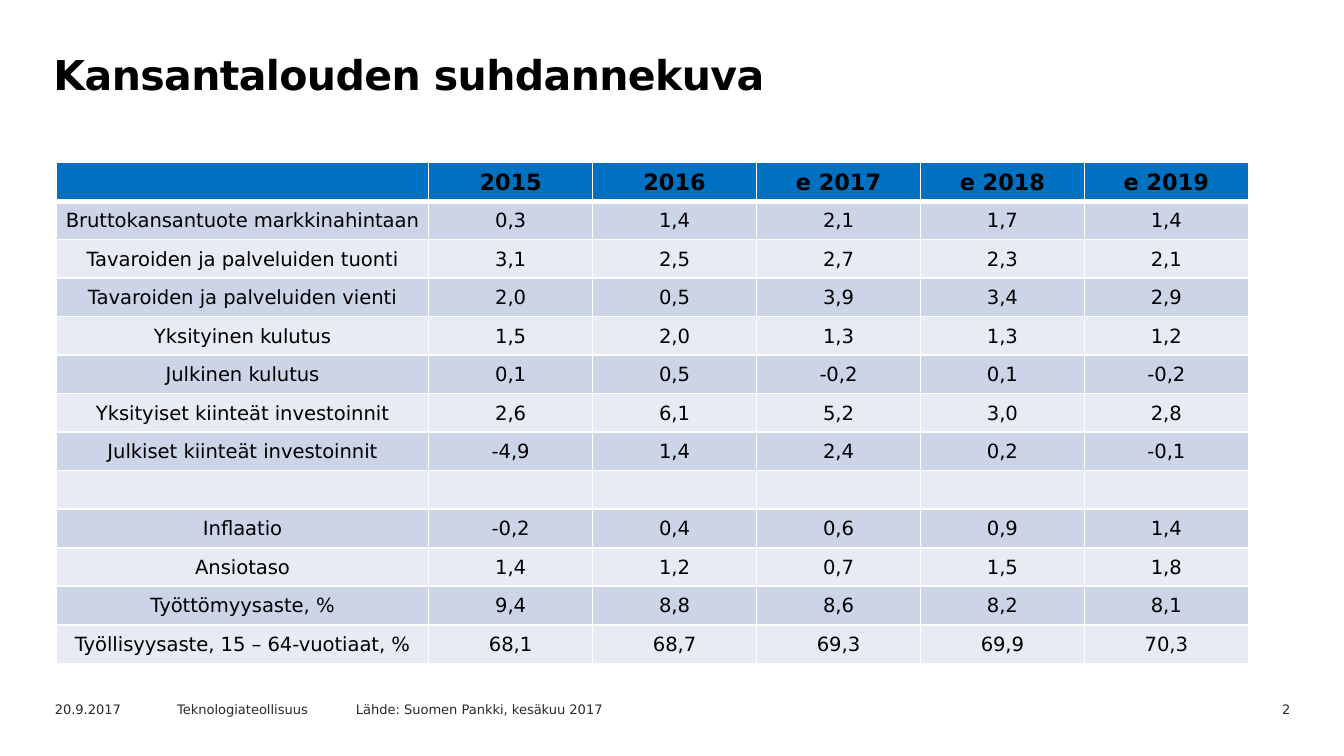
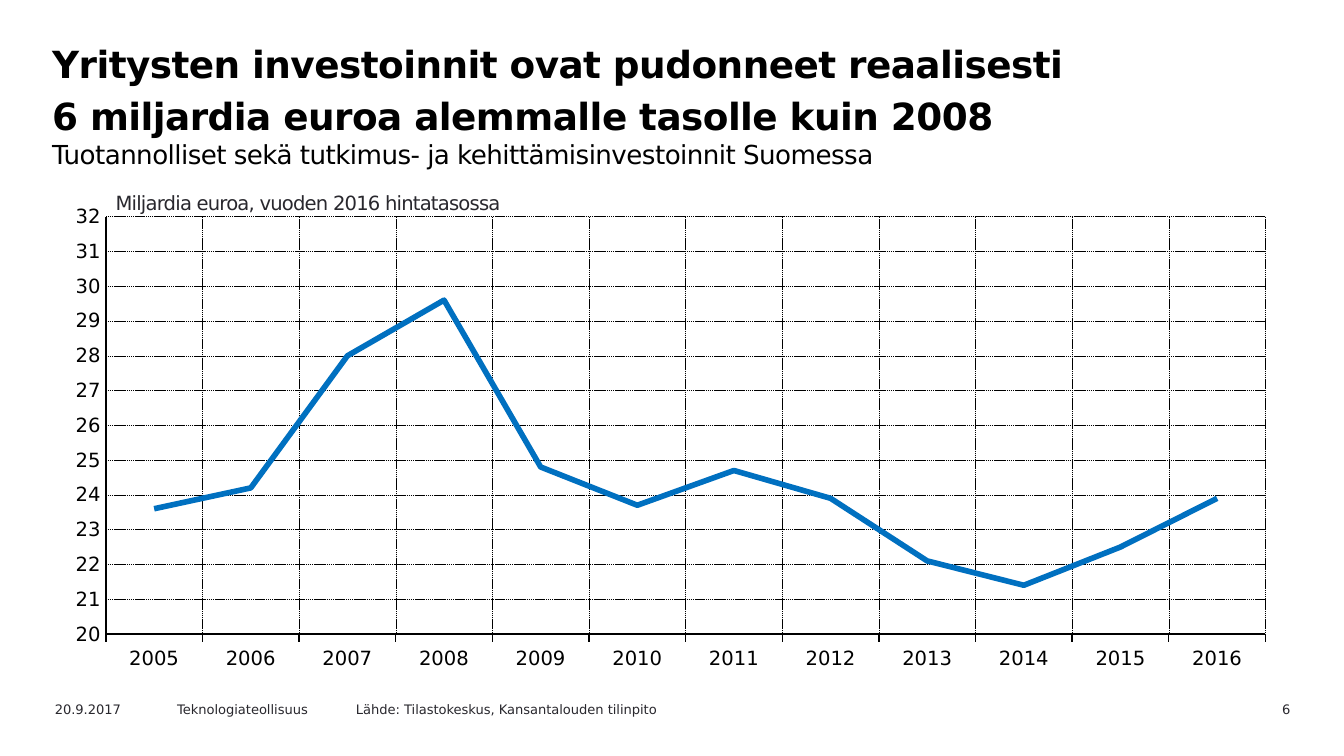
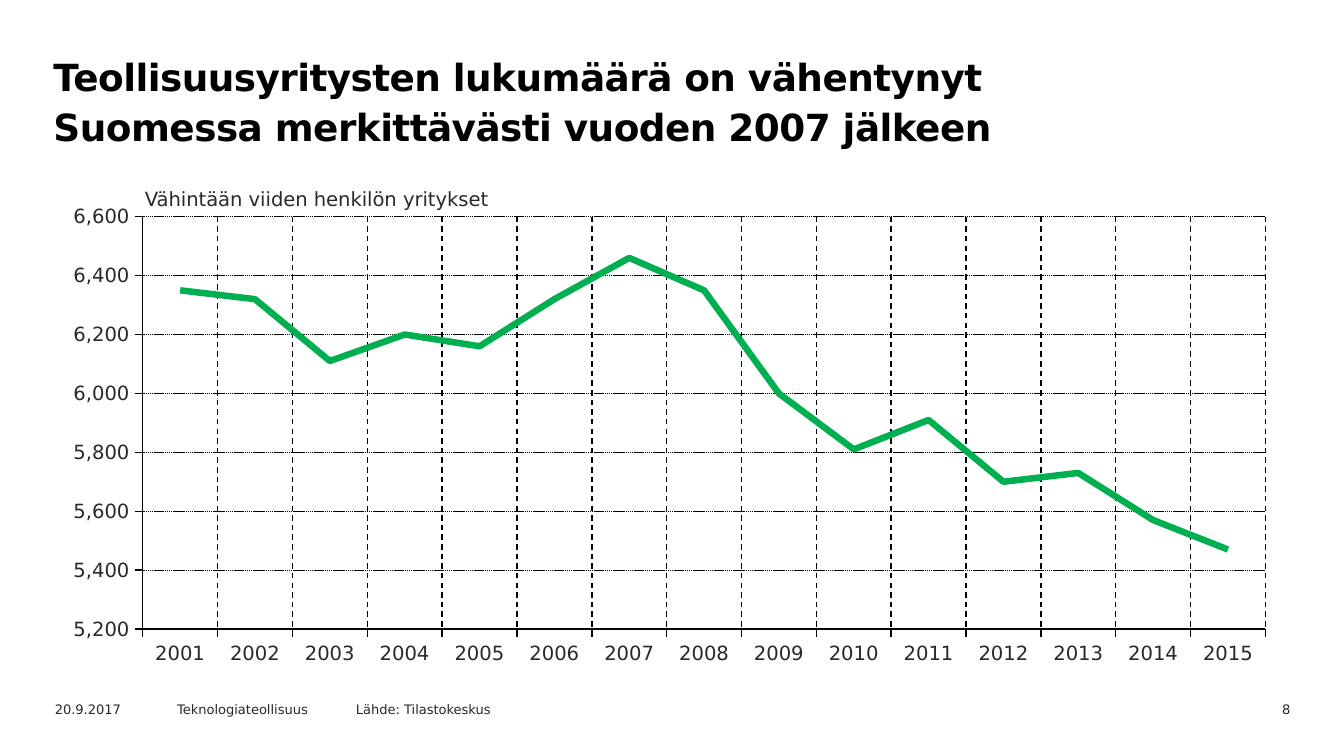
"""Build three slides on the Finnish economy: one table and two line charts."""
from lxml.etree import SubElement
from pptx import Presentation
from pptx.chart.data import CategoryChartData
from pptx.dml.color import RGBColor
from pptx.enum.chart import XL_CHART_TYPE, XL_TICK_MARK
from pptx.enum.dml import MSO_LINE
from pptx.enum.text import MSO_ANCHOR, PP_ALIGN
from pptx.oxml import parse_xml
from pptx.oxml.ns import nsdecls, qn
from pptx.util import Inches, Pt

FONT = "DejaVu Sans"
BLACK = RGBColor(0x00, 0x00, 0x00)
INK = RGBColor(0x29, 0x28, 0x2E)
WHITE = RGBColor(0xFF, 0xFF, 0xFF)
BLUE = RGBColor(0x00, 0x70, 0xC0)
GREEN = RGBColor(0x00, 0xB0, 0x50)
BANDS = (RGBColor(0xE7, 0xEB, 0xF4), RGBColor(0xCC, 0xD5, 0xE8))

prs = Presentation()
prs.slide_width = Inches(10)
prs.slide_height = Inches(5.625)
X = prs.slide_width / 100
Y = prs.slide_height / 100


def add_run(p, text, size, color=INK, bold=False, spacing=0):
    r = p.add_run()
    r.text = text
    r.font.name = FONT
    r.font.size = Pt(size)
    r.font.bold = bold
    r.font.color.rgb = color
    if spacing:
        r._r.get_or_add_rPr().set("spc", str(spacing))


def add_box(s, left, top, width, height):
    sp = s.shapes.add_textbox(int(left * X), int(top * Y), int(width * X), int(height * Y))
    sp.text_frame.word_wrap = True
    return sp.text_frame


PAGES = [
    {"number": "2", "source": "Lähde: Suomen Pankki, kesäkuu 2017", "left": 2.8, "top": 5.5,
     "title": ["Kansantalouden suhdannekuva"], "size": 22, "leading": Pt(27)},
    {"number": "6", "source": "Lähde: Tilastokeskus, Kansantalouden tilinpito", "left": 2.7, "top": 4.6,
     "title": ["Yritysten investoinnit ovat pudonneet reaalisesti",
               "6 miljardia euroa alemmalle tasolle kuin 2008"], "size": 20, "leading": None,
     "subtitle": "Tuotannolliset sekä tutkimus- ja kehittämisinvestoinnit Suomessa"},
    {"number": "8", "source": "Lähde: Tilastokeskus", "left": 2.8, "top": 5.5,
     "title": ["Teollisuusyritysten lukumäärä on vähentynyt Suomessa merkittävästi vuoden 2007 jälkeen"],
     "size": 20, "leading": Pt(27)},
]

slides = []
for page in PAGES:
    s = prs.slides.add_slide(prs.slide_layouts[6])
    slides.append(s)
    tf = add_box(s, page["left"], page["top"], 87, 12.6)
    for i, line in enumerate(page["title"]):
        p = tf.add_paragraph() if i else tf.paragraphs[0]
        p._p.get_or_add_pPr().set("marL", str(Inches(0.02)))
        p.line_spacing = page["leading"]
        p.space_before = Pt(4 if i else 0)
        add_run(p, line, page["size"], BLACK, True, -30)
    if "subtitle" in page:
        p.add_line_break()
        add_run(p, page["subtitle"], 14, BLACK, False, -30)
    for text, left, width, align in (
        ("20.9.2017", 3.1, 10, PP_ALIGN.LEFT),
        ("Teknologiateollisuus", 12.2, 14.2, PP_ALIGN.LEFT),
        (page["source"], 25.5, 41.8, PP_ALIGN.LEFT),
        (page["number"], 87.6, 9.4, PP_ALIGN.RIGHT),
    ):
        p = add_box(s, left, 91.9, width, 3.2).paragraphs[0]
        p.alignment = align
        add_run(p, text, 7)

YEARS = ["2015", "2016", "e 2017", "e 2018", "e 2019"]
ROWS = [
    ("", YEARS),
    ("Bruttokansantuote markkinahintaan", "0,3 1,4 2,1 1,7 1,4".split()),
    ("Tavaroiden ja palveluiden tuonti", "3,1 2,5 2,7 2,3 2,1".split()),
    ("Tavaroiden ja palveluiden vienti", "2,0 0,5 3,9 3,4 2,9".split()),
    ("Yksityinen kulutus", "1,5 2,0 1,3 1,3 1,2".split()),
    ("Julkinen kulutus", "0,1 0,5 -0,2 0,1 -0,2".split()),
    ("Yksityiset kiinteät investoinnit", "2,6 6,1 5,2 3,0 2,8".split()),
    ("Julkiset kiinteät investoinnit", "-4,9 1,4 2,4 0,2 -0,1".split()),
    ("", [""] * len(YEARS)),
    ("Inflaatio", "-0,2 0,4 0,6 0,9 1,4".split()),
    ("Ansiotaso", "1,4 1,2 0,7 1,5 1,8".split()),
    ("Työttömyysaste, %", "9,4 8,8 8,6 8,2 8,1".split()),
    ("Työllisyysaste, 15 – 64-vuotiaat, %", "68,1 68,7 69,3 69,9 70,3".split()),
]
table = slides[0].shapes.add_table(
    len(ROWS), len(YEARS) + 1, int(4.2 * X), int(21.5 * Y), int(88.7 * X), int(66.3 * Y)).table
for i, col in enumerate(table.columns):
    col.width = int((12.2 if i else 27.7) * X)
for i, (label, values) in enumerate(ROWS):
    for j, text in enumerate([label, *values]):
        cell = table.cell(i, j)
        cell.vertical_anchor = MSO_ANCHOR.MIDDLE
        cell.margin_left = cell.margin_right = cell.margin_top = Inches(0.01)
        cell.margin_bottom = 0
        tcPr = cell._tc.get_or_add_tcPr()
        for side in "LRTB":
            heavy = (i == 0 and side == "B") or (i == 1 and side == "T")
            tcPr.append(parse_xml(
                f'<a:ln{side} {nsdecls("a")} w="{Pt(3 if heavy else 1)}"><a:solidFill>'
                f'<a:srgbClr val="{WHITE}"/></a:solidFill></a:ln{side}>'))
        cell.fill.solid()
        cell.fill.fore_color.rgb = BANDS[i % 2] if i else BLUE
        p = cell.text_frame.paragraphs[0]
        p.alignment = PP_ALIGN.CENTER
        if text:
            add_run(p, text, 10.5 if i else 12, BLACK, i == 0)
        else:
            SubElement(p._p, qn("a:endParaRPr"), sz="1050")

CHARTS = [
    {"slide": slides[1], "first": 2005, "color": BLUE, "weight": 3, "ink": BLACK,
     "values": [23.6, 24.2, 28, 29.6, 24.8, 23.7, 24.7, 23.9, 22.1, 21.4, 22.5, 23.9],
     "scale": (20, 32, 1), "tick": XL_TICK_MARK.NONE, "plot": (0.04, 0.04, 0.94, 0.86),
     "cat_grid": (0.25, MSO_LINE.SQUARE_DOT),
     "label": "Miljardia euroa, vuoden 2016 hintatasossa", "at": (8.2, 24.5, 39.4, 4.6),
     "inset": 0.04, "spacing": -40},
    {"slide": slides[2], "first": 2001, "color": GREEN, "weight": 3.5, "ink": INK,
     "values": [6350, 6320, 6110, 6200, 6160, 6320, 6460, 6350, 6000, 5810, 5910, 5700, 5730, 5570, 5470],
     "scale": (5200, 6600, 200), "tick": XL_TICK_MARK.OUTSIDE, "plot": (0.07, 0.04, 0.91, 0.85),
     "cat_grid": (0.75, MSO_LINE.DASH),
     "label": "Vähintään viiden henkilön yritykset", "at": (9.8, 23.8, 28.6, 5),
     "inset": None, "spacing": 0},
]
for spec in CHARTS:
    s = spec["slide"]
    data = CategoryChartData()
    data.categories = [str(spec["first"] + i) for i in range(len(spec["values"]))]
    data.add_series("Series 1", spec["values"])
    chart = s.shapes.add_chart(
        XL_CHART_TYPE.LINE, int(4.2 * X), int(26.1 * Y), int(91.8 * X), int(64.2 * Y), data).chart
    chart.has_legend = False
    chart.has_title = False
    chart.font.name = FONT
    chart.font.size = Pt(10.5)
    chart.font.color.rgb = spec["ink"]
    plot = chart.plots[0]
    plot.vary_by_categories = False
    series = plot.series[0]
    series.smooth = False
    series.format.line.color.rgb = spec["color"]
    series.format.line.width = Pt(spec["weight"])

    for axis, tick, (width, dash) in (
        (chart.category_axis, XL_TICK_MARK.OUTSIDE, spec["cat_grid"]),
        (chart.value_axis, spec["tick"], (0.25, MSO_LINE.SQUARE_DOT)),
    ):
        axis.major_tick_mark = tick
        axis.minor_tick_mark = XL_TICK_MARK.NONE
        axis.format.line.color.rgb = BLACK
        axis.format.line.width = Pt(0.75)
        axis.has_major_gridlines = True
        grid = axis.major_gridlines.format.line
        grid.color.rgb = BLACK
        grid.width = Pt(width)
        grid.dash_style = dash
    axis = chart.value_axis
    axis.minimum_scale, axis.maximum_scale, axis.major_unit = spec["scale"]
    axis.tick_labels.number_format = "#,##0"
    axis.tick_labels.number_format_is_linked = False

    area = chart._chartSpace.chart.plotArea
    for old in area.findall(qn("c:layout")):
        area.remove(old)
    layout = parse_xml(f'<c:layout {nsdecls("c")}><c:manualLayout/></c:layout>')
    area.insert(0, layout)
    settings = [("layoutTarget", "inner"), ("xMode", "edge"), ("yMode", "edge"), *zip("xywh", spec["plot"])]
    for tag, value in settings:
        SubElement(layout[0], qn(f"c:{tag}"), val=str(value))

    tf = add_box(s, *spec["at"])
    if spec["inset"]:
        tf.margin_left = tf.margin_right = tf.margin_top = tf.margin_bottom = Inches(spec["inset"])
    add_run(tf.paragraphs[0], spec["label"], 10.5, spacing=spec["spacing"])

prs.save("out.pptx")
